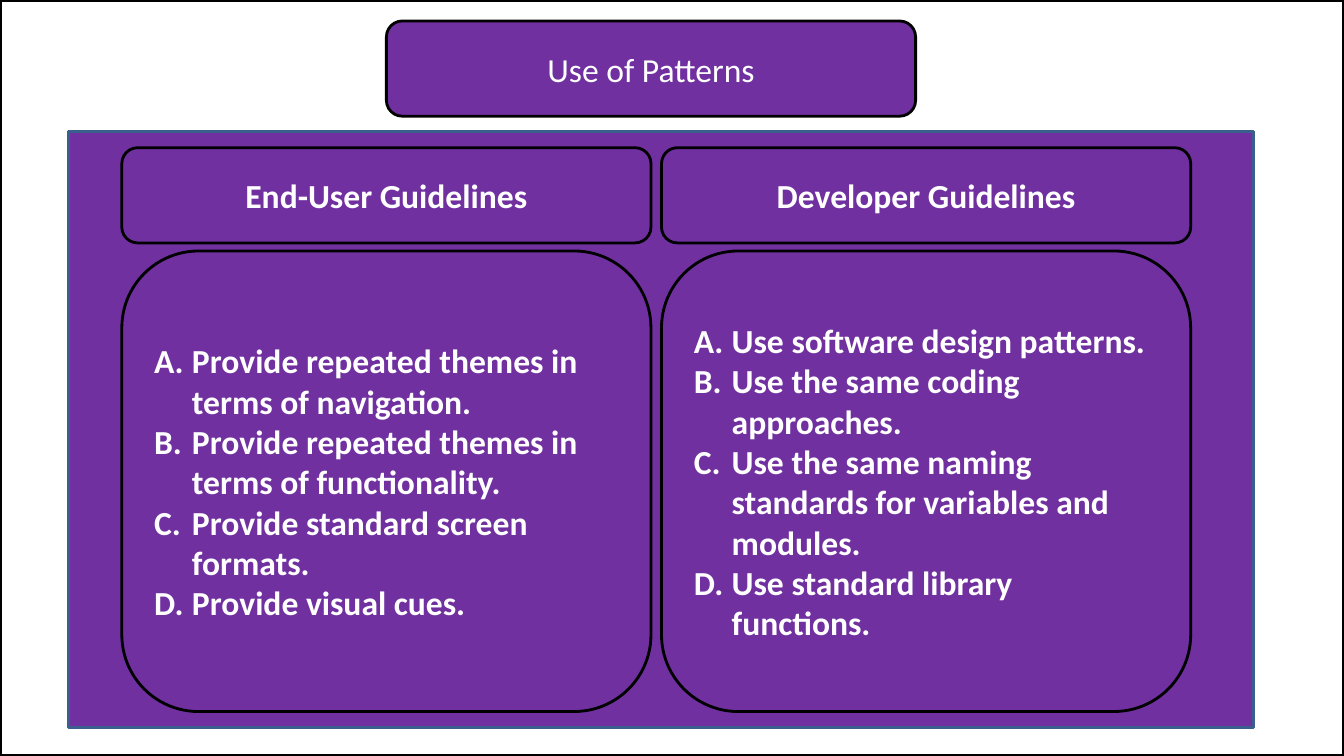
from lxml import etree
from pptx import Presentation
from pptx import util as u
from pptx.dml.color import RGBColor
from pptx.enum import shapes, text
from pptx.oxml import ns

PURPLE, BLACK, WHITE, BLUE = "7030A0", "000000", "FFFFFF", "3A5F8C"


def color(value):
    return RGBColor.from_string(value)


class SlideBuilder:
    font_name = "Calibri"
    font_size = 24
    indent = 27

    def __init__(self, slide):
        self.slide = slide

    def box(self, kind, left, top, width, height, fill=PURPLE, line=BLACK, weight=2):
        shape = self.slide.shapes.add_shape(
            kind, *(u.Pt(length) for length in (left, top, width, height)))
        shape.shadow.inherit = False
        if fill:
            shape.fill.solid()
            shape.fill.fore_color.rgb = color(fill)
        else:
            shape.fill.background()
        shape.line.color.rgb = color(line)
        shape.line.width = u.Pt(weight)
        return shape

    def rectangle(self, *bounds, **style):
        return self.box(shapes.MSO_SHAPE.RECTANGLE, *bounds, **style)

    def rounded(self, lines, *bounds, bold=True, align=text.PP_ALIGN.CENTER):
        shape = self.box(shapes.MSO_SHAPE.ROUNDED_RECTANGLE, *bounds)
        frame = shape.text_frame
        frame.word_wrap = True
        frame.vertical_anchor = text.MSO_ANCHOR.MIDDLE
        frame.text = "\n".join(lines)
        for paragraph in frame.paragraphs:
            paragraph.alignment = align
            font = paragraph.font
            font.name = self.font_name
            font.size = u.Pt(self.font_size)
            font.bold = bold
            font.color.rgb = color(WHITE)
        return shape

    def lettered_list(self, items, *bounds):
        shape = self.rounded(items, *bounds, align=text.PP_ALIGN.LEFT)
        for paragraph in shape.text_frame.paragraphs:
            properties = paragraph._p.get_or_add_pPr()
            properties.set("marL", str(u.Pt(self.indent)))
            properties.set("indent", str(u.Pt(-self.indent)))
            numbering = etree.Element(ns.qn("a:buAutoNum"), type="alphaUcPeriod")
            properties.insert(0, numbering)


GUIDELINES = {
    "End-User Guidelines": [
        "Provide repeated themes in terms of navigation.",
        "Provide repeated themes in terms of functionality.",
        "Provide standard screen formats.",
        "Provide visual cues.",
    ],
    "Developer Guidelines": [
        "Use software design patterns.",
        "Use the same coding approaches.",
        "Use the same naming standards for variables and modules.",
        "Use standard library functions.",
    ],
}
SLIDE_WIDTH, SLIDE_HEIGHT = 960, 540
COLUMN_LEFT, COLUMN_WIDTH, COLUMN_STEP = 87, 378, 385.5
HEADING_HEIGHT = 68


def main():
    presentation = Presentation()
    presentation.slide_width = u.Pt(SLIDE_WIDTH)
    presentation.slide_height = u.Pt(SLIDE_HEIGHT)
    slide = presentation.slides.add_slide(presentation.slide_layouts[6])
    builder = SlideBuilder(slide)

    builder.rectangle(49, 94, 846.5, 425.5, line=BLUE)
    for column, (heading, items) in enumerate(GUIDELINES.items()):
        left = COLUMN_LEFT + column * COLUMN_STEP
        builder.rounded([heading], left, 105.5, COLUMN_WIDTH, HEADING_HEIGHT)
        builder.lettered_list(items, left, 179.3, COLUMN_WIDTH, 329)
    builder.rounded(["Use of Patterns"], 276, 15, COLUMN_WIDTH, HEADING_HEIGHT, bold=False)
    builder.rectangle(0, 0, SLIDE_WIDTH, SLIDE_HEIGHT, fill=None, weight=3)

    presentation.save("out.pptx")


if __name__ == "__main__":
    main()
